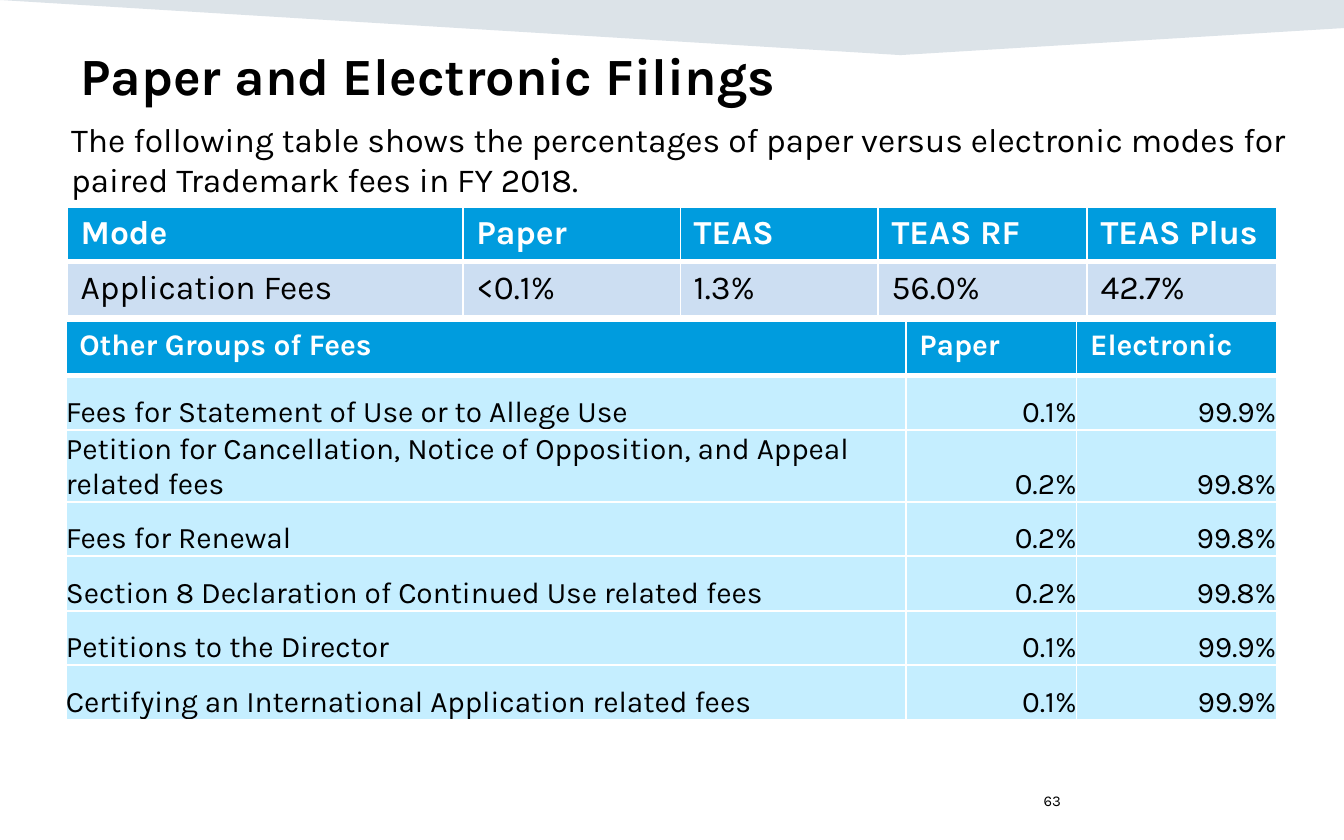
import dataclasses

import pptx
import pptx.dml.color
import pptx.enum.text
import pptx.oxml
import pptx.oxml.ns
import pptx.util

Pt = pptx.util.Pt
RGB = pptx.dml.color.RGBColor.from_string
Align = pptx.enum.text.PP_ALIGN
Anchor = pptx.enum.text.MSO_ANCHOR


@dataclasses.dataclass(frozen=True)
class Theme:
    """Colours, font and type sizes of the slide."""
    font: str = "Karla"
    ink: str = "000000"
    paper: str = "FFFFFF"
    band: str = "164469"
    header: str = "009CDE"
    modes_row: str = "CCDEF2"
    fees_row: str = "C5EEFF"
    title: float = 28
    body: float = 18
    fees: float = 16
    number: float = 8


T = Theme()

MODES = [
    ("Mode", "Paper", "TEAS", "TEAS RF", "TEAS Plus"),
    ("Application Fees", "<0.1%", "1.3%", "56.0%", "42.7%"),
]
FEES = [
    ("Other Groups of Fees", "Paper", "Electronic"),
    ("Fees for Statement of Use or to Allege Use", "0.1%", "99.9%"),
    ("Petition for Cancellation, Notice of Opposition, and Appeal related fees", "0.2%", "99.8%"),
    ("Fees for Renewal", "0.2%", "99.8%"),
    ("Section 8 Declaration of Continued Use related fees", "0.2%", "99.8%"),
    ("Petitions to the Director", "0.1%", "99.9%"),
    ("Certifying an International Application related fees", "0.1%", "99.9%"),
]


def write(tf, text, size, color=T.ink, bold=False, align=Align.LEFT):
    """Set one paragraph of text and format its run."""
    tf.text = text
    p = tf.paragraphs[0]
    p.alignment = align
    f = p.runs[0].font
    f.name, f.size, f.bold = T.font, Pt(size), bold
    f.color.rgb = RGB(color)


def add_band(s, x, y, w, h):
    """Draw the pale angled band behind the title."""
    fb = s.shapes.build_freeform(Pt(x), Pt(y))
    corners = [(x + w, y), (x + w, y + h * 0.51), (x + w * 0.67, y + h)]
    fb.add_line_segments([(Pt(a), Pt(b)) for a, b in corners], close=True)
    sp = fb.convert_to_shape()
    sp.shadow.inherit = False
    sp.line.fill.background()
    sp.fill.solid()
    sp.fill.fore_color.rgb = RGB(T.band)
    clr = sp.element.spPr.find(".//" + pptx.oxml.ns.qn("a:srgbClr"))
    clr.append(pptx.oxml.parse_xml(f'<a:alpha {pptx.oxml.ns.nsdecls("a")} val="15000"/>'))
    s.shapes.title.element.addprevious(sp.element)


def add_title(s, x, y, w, h, text):
    """Place and format the title placeholder."""
    sp = s.shapes.title
    sp.left, sp.top, sp.width, sp.height = Pt(x), Pt(y), Pt(w), Pt(h)
    tf = sp.text_frame
    tf.auto_size = pptx.enum.text.MSO_AUTO_SIZE.NONE
    tf.vertical_anchor = Anchor.TOP
    write(tf, text, T.title, bold=True)


def add_text(s, x, y, w, h, text, size, anchor=Anchor.TOP):
    """Add a wrapping text box."""
    tf = s.shapes.add_textbox(Pt(x), Pt(y), Pt(w), Pt(h)).text_frame
    tf.word_wrap = True
    tf.vertical_anchor = anchor
    write(tf, text, size)


def set_borders(cell, top, bottom):
    """Give a cell white borders, with its own top and bottom weights."""
    tcPr = cell._tc.get_or_add_tcPr()
    for side, weight in zip("LRTB", (1, 1, top, bottom)):
        tcPr.append(pptx.oxml.parse_xml(
            f'<a:ln{side} {pptx.oxml.ns.nsdecls("a")} w="{Pt(weight)}">'
            f'<a:solidFill><a:srgbClr val="{T.paper}"/></a:solidFill></a:ln{side}>'))


def add_grid(s, x, y, widths, heights, rows, size, fill, tight=False):
    """Add a table with a header row; tight bodies have no margins and right-aligned values."""
    tbl = s.shapes.add_table(len(rows), len(widths), Pt(x), Pt(y),
                             Pt(sum(widths)), Pt(sum(heights))).table
    for col, w in zip(tbl.columns, widths):
        col.width = Pt(w)
    for i, (row, h) in enumerate(zip(rows, heights)):
        tbl.rows[i].height = Pt(h)
        head = i == 0
        for j, text in enumerate(row):
            cell = tbl.cell(i, j)
            set_borders(cell, 3 if i == 1 else 1, 3 if head else 1)
            cell.fill.solid()
            cell.fill.fore_color.rgb = RGB(T.header if head else fill)
            align = Align.LEFT
            if tight and not head:
                cell.margin_left = cell.margin_right = cell.margin_top = cell.margin_bottom = 0
                cell.vertical_anchor = Anchor.BOTTOM
                align = Align.RIGHT if j else Align.LEFT
            write(cell.text_frame, text, size, T.paper if head else T.ink, head, align)


def main():
    """Build and save the slide."""
    prs = pptx.Presentation()
    prs.slide_width, prs.slide_height = Pt(720), Pt(450)
    s = prs.slides.add_slide(prs.slide_layouts[5])
    add_band(s, 0, 0, 720, 29.5)
    add_title(s, 36, 19.5, 648, 40.5, "Paper and Electronic Filings")
    add_text(s, 552, 417, 168, 24, "63", T.number, Anchor.MIDDLE)
    add_text(s, 31, 60, 695.5, 51,
             "The following table shows the percentages of paper versus electronic modes "
             "for paired Trademark fees in FY 2018.", T.body)
    row = 29.2
    add_grid(s, 35.3, 172, (450, 91.5, 107), (row, row, 38.4) + (row,) * 4,
             FEES, T.fees, T.fees_row, tight=True)
    add_grid(s, 36, 110.9, (212, 116.5, 106, 112, 101.5), (row, row),
             MODES, T.body, T.modes_row)
    prs.save("out.pptx")


if __name__ == "__main__":
    main()
